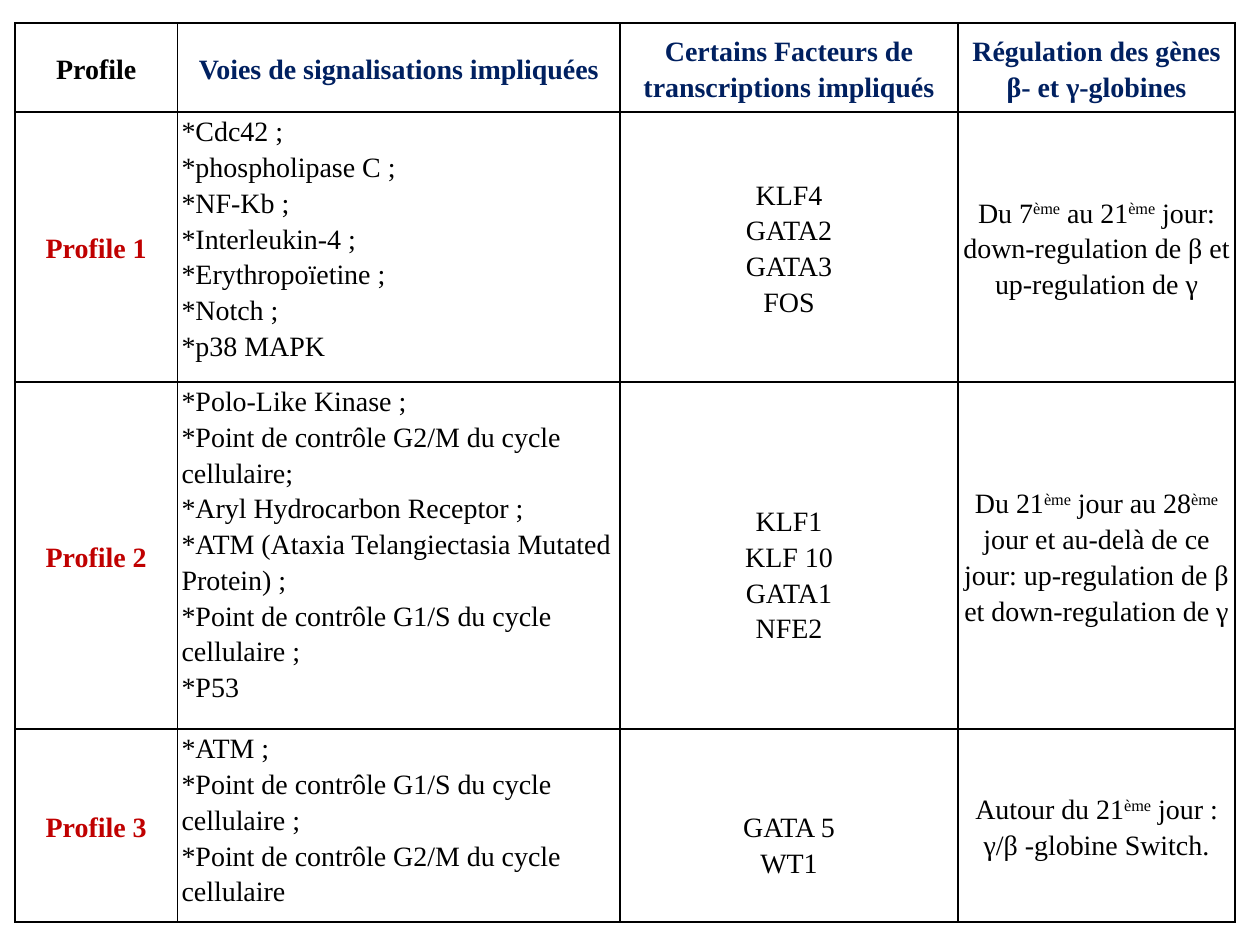
from lxml import etree
from pptx import Presentation
from pptx.dml.color import RGBColor
from pptx.enum.text import MSO_ANCHOR, PP_ALIGN
from pptx.oxml.ns import qn
from pptx.util import Cm, Pt

BLACK = RGBColor(0x00, 0x00, 0x00)
WHITE = RGBColor(0xFF, 0xFF, 0xFF)
NAVY = RGBColor(0x00, 0x20, 0x60)
RED = RGBColor(0xC0, 0x00, 0x00)
CENTER, LEFT = PP_ALIGN.CENTER, PP_ALIGN.LEFT
MIDDLE, TOP = MSO_ANCHOR.MIDDLE, MSO_ANCHOR.TOP

FONT = "Times New Roman"
COL_WIDTHS = [3.28, 8.92, 6.81, 5.59]
ROW_HEIGHTS = [1.8, 5.44, 7, 3.89]
LINE_HEIGHT = 0.72

# One paragraph per line; text between ^ signs is superscript
ROWS = [
    ["Profile", "Voies de signalisations impliquées",
     "Certains Facteurs de transcriptions impliqués",
     "Régulation des gènes β- et γ-globines"],
    ["Profile 1",
     "*Cdc42 ;\n*phospholipase C ;\n*NF-Kb ;\n*Interleukin-4 ;\n"
     "*Erythropoïetine ;\n*Notch ;\n*p38 MAPK",
     "KLF4\nGATA2\nGATA3\nFOS",
     "Du 7^ème^ au 21^ème^ jour: down-regulation de β et up-regulation de γ"],
    ["Profile 2",
     "*Polo-Like Kinase ;\n*Point de contrôle G2/M du cycle cellulaire;\n"
     "*Aryl Hydrocarbon Receptor ;\n"
     "*ATM (Ataxia Telangiectasia Mutated Protein) ;\n"
     "*Point de contrôle G1/S du cycle cellulaire ;\n*P53",
     "KLF1\nKLF 10\nGATA1\nNFE2",
     "Du 21^ème^ jour au 28^ème^ jour et au-delà de ce jour: "
     "up-regulation de β et down-regulation de γ"],
    ["Profile 3",
     "*ATM ;\n*Point de contrôle G1/S du cycle cellulaire ;\n"
     "*Point de contrôle G2/M du cycle cellulaire",
     "GATA 5\nWT1",
     "Autour du 21^ème^ jour : γ/β -globine Switch."],
]


def add_borders(cell):
    tcPr = cell._tc.get_or_add_tcPr()
    for side in ("a:lnL", "a:lnR", "a:lnT", "a:lnB"):
        ln = etree.SubElement(tcPr, qn(side), w=str(Pt(1)))
        fill = etree.SubElement(ln, qn("a:solidFill"))
        etree.SubElement(fill, qn("a:srgbClr"), val=str(BLACK))


def add_text(p, text, color, bold):
    for i, part in enumerate(text.split("^")):
        r = p.add_run()
        r.text = part
        r.font.name = FONT
        r.font.size = Pt(16)
        r.font.bold = bold
        r.font.color.rgb = color
        if i % 2:
            r._r.get_or_add_rPr().set("baseline", "30000")


prs = Presentation()
prs.slide_width, prs.slide_height = Cm(25.4), Cm(19.05)
s = prs.slides.add_slide(prs.slide_layouts[6])

# Table grid
table = s.shapes.add_table(
    len(ROWS), len(COL_WIDTHS), Cm(0.3), Cm(0.46),
    Cm(sum(COL_WIDTHS)), Cm(sum(ROW_HEIGHTS))).table
table.first_row = table.horz_banding = False
for col, width in zip(table.columns, COL_WIDTHS):
    col.width = Cm(width)
for row, height in zip(table.rows, ROW_HEIGHTS):
    row.height = Cm(height)

# Cells
for i, texts in enumerate(ROWS):
    for j, text in enumerate(texts):
        cell = table.cell(i, j)
        add_borders(cell)
        cell.fill.solid()
        cell.fill.fore_color.rgb = WHITE
        cell.margin_left = cell.margin_right = Cm(0.08)
        # The factors of profiles 2 and 3 sit one line lower
        cell.margin_top = Cm(LINE_HEIGHT if j == 2 and i > 1 else 0)
        cell.margin_bottom = Cm(0)

        is_list = i > 0 and j == 1
        cell.vertical_anchor = TOP if is_list else MIDDLE
        if i == 0:
            color = NAVY if j else BLACK
        else:
            color = BLACK if j else RED

        tf = cell.text_frame
        for k, line in enumerate(text.split("\n")):
            p = tf.add_paragraph() if k else tf.paragraphs[0]
            p.alignment = LEFT if is_list else CENTER
            p.line_spacing = 1.15
            add_text(p, line, color, bold=i == 0 or j == 0)

prs.save("out.pptx")
